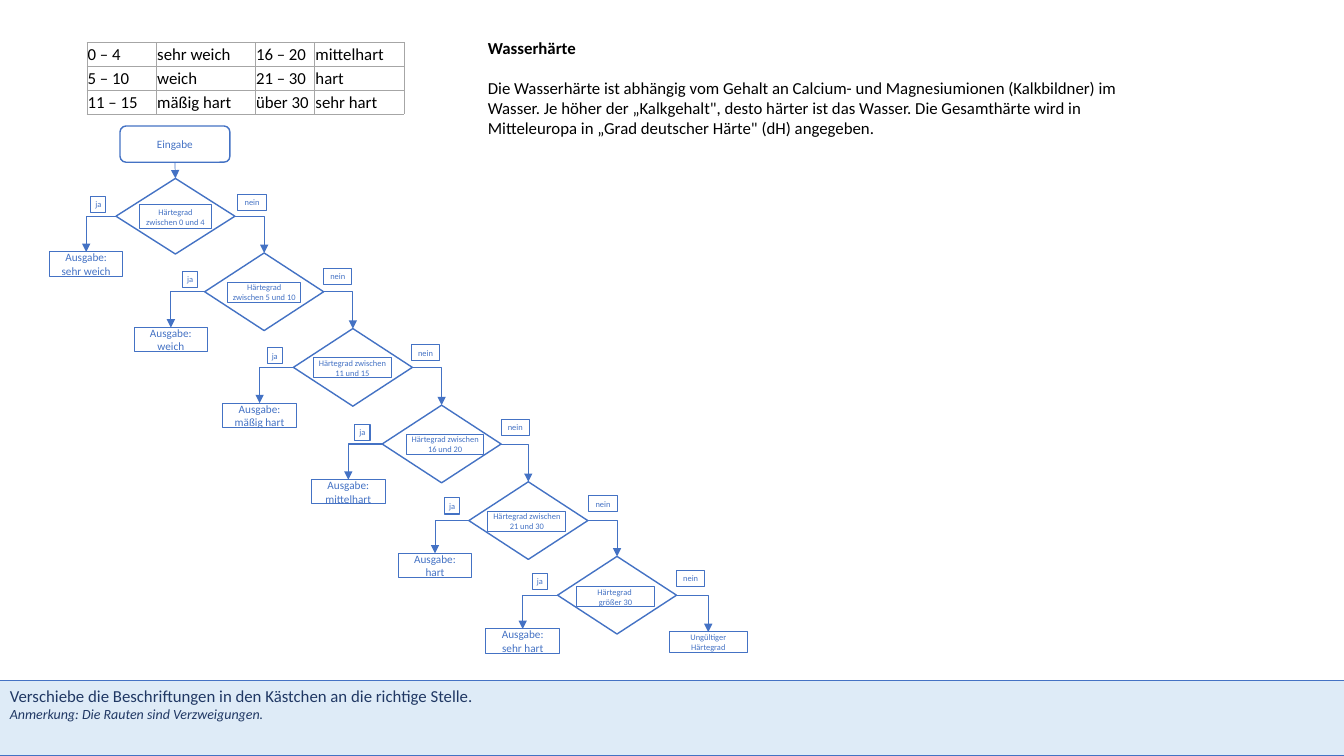
from dataclasses import dataclass

from lxml import etree
from pptx import Presentation
from pptx.dml.color import RGBColor
from pptx.enum.shapes import MSO_CONNECTOR as Link, MSO_SHAPE as Shape
from pptx.enum.text import MSO_ANCHOR as Anchor, PP_ALIGN as Align
from pptx.oxml.ns import qn
from pptx.shapes.autoshape import Shape as AutoShape
from pptx.slide import Slide
from pptx.table import _Cell as Cell
from pptx.text.text import TextFrame
from pptx.util import Inches, Pt

BLUE = RGBColor(0x44, 0x72, 0xC4)
NAVY = RGBColor(0x20, 0x38, 0x64)
PALE_BLUE = RGBColor(0xDE, 0xEB, 0xF7)
BLACK = RGBColor(0, 0, 0)
BORDER_GREY = "A6A6A6"
FONT = "Calibri"

# Connection sites shared by rectangles and diamonds
TOP, LEFT, BOTTOM, RIGHT = range(4)

DIAMOND_WIDTH = 1.18
OUTPUT_SIZE = (0.73, 0.24)
YES_SIZE = (0.15, 0.16)
NO_SIZE = (0.28, 0.16)
CONDITION_HEIGHT = 0.2
SMALL_INSET = 0.04

HARDNESS_ROWS = [
    ("0 – 4", "sehr weich", "16 – 20", "mittelhart"),
    ("5 – 10", "weich", "21 – 30", "hart"),
    ("11 – 15", "mäßig hart", "über 30", "sehr hart"),
]
COLUMN_WIDTHS = (0.69, 0.98, 0.59, 0.89)
ROW_HEIGHT = 0.23

EXPLANATION = (
    "Die Wasserhärte ist abhängig vom Gehalt an Calcium- und Magnesiumionen "
    "(Kalkbildner) im Wasser. Je höher der „Kalkgehalt\", desto härter ist das "
    "Wasser. Die Gesamthärte wird in Mitteleuropa in „Grad deutscher Härte\" "
    "(dH) angegeben."
)

Point = tuple[float, float]


@dataclass(frozen=True)
class Decision:
    diamond: Point
    condition: str
    condition_at: Point
    output: str
    output_at: Point
    yes_at: Point
    no_at: Point
    height: float = 0.77
    condition_width: float = 0.77
    condition_height: float = CONDITION_HEIGHT


DECISIONS = [
    Decision((1.15, 1.77), "Härtegrad zwischen 0 und 4", (1.38, 2.03), "sehr weich",
             (0.49, 2.5), (0.9, 1.95), (2.36, 1.93), 0.75, 0.72, 0.24),
    Decision((2.03, 2.51), "Härtegrad zwischen 5 und 10", (2.26, 2.8), "weich",
             (1.33, 3.25), (1.81, 2.69), (3.21, 2.66), condition_width=0.72),
    Decision((2.91, 3.26), "Härtegrad zwischen 11 und 15", (3.11, 3.55), "mäßig hart",
             (2.21, 4), (2.65, 3.45), (4.08, 3.42)),
    Decision((3.79, 4.02), "Härtegrad zwischen 16 und 20", (4.03, 4.31), "mittelhart",
             (3.09, 4.76), (3.52, 4.21), (4.97, 4.16)),
    Decision((4.65, 4.78), "Härtegrad zwischen 21 und 30", (4.84, 5.07), "hart",
             (3.95, 5.49), (4.41, 4.94), (5.84, 4.92)),
    Decision((5.53, 5.52), "Härtegrad \vgrößer 30", (5.72, 5.82), "sehr hart",
             (4.82, 6.24), (5.28, 5.69), (6.71, 5.66)),
]


def write(frame: TextFrame, text: str, *, size: float, color: RGBColor = BLUE,
          bold: bool = False, italic: bool = False, align: Align = Align.LEFT,
          line_spacing: float | None = None, space_after: float = 0) -> None:
    """Fill the empty first paragraph, or append a paragraph after it."""
    paragraph = frame.paragraphs[0]
    if paragraph.runs:
        paragraph = frame.add_paragraph()
    paragraph.text = text
    paragraph.alignment = align
    paragraph.line_spacing = line_spacing
    paragraph.space_after = Pt(space_after)
    for run in paragraph.runs:
        font = run.font
        font.name, font.size = FONT, Pt(size)
        font.bold, font.italic = bold, italic
        font.color.rgb = color


def add_outlined(slide: Slide, kind: Shape, at: Point, size: Point,
                 line_width: float = 0.75) -> AutoShape:
    shape = slide.shapes.add_shape(kind, *map(Inches, (*at, *size)))
    shape.shadow.inherit = False
    shape.fill.background()
    shape.line.color.rgb = BLUE
    shape.line.width = Pt(line_width)
    shape.text_frame.word_wrap = True
    return shape


def add_label(slide: Slide, text: str, at: Point, size: Point, *,
              text_size: float = 6, kind: Shape = Shape.RECTANGLE,
              line_width: float = 0.75, wrap: bool = True) -> AutoShape:
    label = add_outlined(slide, kind, at, size, line_width)
    frame = label.text_frame
    frame.word_wrap = wrap
    frame.vertical_anchor = Anchor.MIDDLE
    if text_size == 6:
        frame.margin_left = frame.margin_right = Inches(SMALL_INSET)
        frame.margin_top = frame.margin_bottom = Inches(SMALL_INSET)
    write(frame, text, size=text_size, align=Align.CENTER)
    return label


def add_arrow(slide: Slide, start: AutoShape, start_site: int, end: AutoShape,
              kind: Link = Link.ELBOW, width: float = 0.75) -> None:
    """Arrow from a side of one shape to the top of another, with one bend if elbowed."""
    arrow = slide.shapes.add_connector(kind, 0, 0, 0, 0)
    arrow.begin_connect(start, start_site)
    arrow.end_connect(end, TOP)
    arrow.line.color.rgb = BLUE
    arrow.line.width = Pt(width)
    properties = arrow._element.spPr
    if kind == Link.ELBOW:
        properties.find(qn("a:prstGeom")).set("prst", "bentConnector2")
    etree.SubElement(properties.find(qn("a:ln")), qn("a:tailEnd"), type="triangle")
    etree.SubElement(properties, qn("a:effectLst"))


def set_borders(cell: Cell) -> None:
    properties = cell._tc.get_or_add_tcPr()
    for position, side in enumerate(("a:lnL", "a:lnR", "a:lnT", "a:lnB")):
        border = etree.Element(qn(side), w=str(Pt(0.25)))
        fill = etree.SubElement(border, qn("a:solidFill"))
        etree.SubElement(fill, qn("a:srgbClr"), val=BORDER_GREY)
        properties.insert(position, border)


def add_hardness_table(slide: Slide) -> None:
    table = slide.shapes.add_table(
        len(HARDNESS_ROWS), len(COLUMN_WIDTHS), Inches(0.86), Inches(0.42),
        Inches(sum(COLUMN_WIDTHS)), Inches(ROW_HEIGHT * len(HARDNESS_ROWS))).table
    table.first_row = table.horz_banding = False
    for column, width in zip(table.columns, COLUMN_WIDTHS):
        column.width = Inches(width)
    for row, texts in zip(table.rows, HARDNESS_ROWS):
        for cell, text in zip(row.cells, texts):
            cell.fill.background()
            cell.vertical_anchor = Anchor.MIDDLE
            cell.margin_left = cell.margin_right = Inches(0.01)
            cell.margin_top = cell.margin_bottom = Inches(0.01)
            write(cell.text_frame, text, size=12, color=BLACK,
                  line_spacing=1.07, space_after=8)
            set_borders(cell)


def add_explanation(slide: Slide) -> None:
    box = slide.shapes.add_textbox(*map(Inches, (4.74, 0.32, 6.72, 1.11)))
    frame = box.text_frame
    frame.word_wrap = True
    write(frame, "Wasserhärte", size=12, color=BLACK, bold=True, space_after=14.5)
    write(frame, EXPLANATION, size=12, color=BLACK)


def add_task(slide: Slide) -> None:
    bar = add_outlined(slide, Shape.RECTANGLE, (0, 6.75), (13.6, 0.75))
    bar.fill.solid()
    bar.fill.fore_color.rgb = PALE_BLUE
    frame = bar.text_frame
    frame.vertical_anchor = Anchor.TOP
    write(frame, "Verschiebe die Beschriftungen in den Kästchen an die richtige Stelle.",
          size=12, color=NAVY)
    write(frame, "Anmerkung: Die Rauten sind Verzweigungen.",
          size=10, color=NAVY, italic=True)


def add_flowchart(slide: Slide) -> None:
    entry = add_label(slide, "Eingabe", (1.19, 1.25), (1.09, 0.36), text_size=8,
                      kind=Shape.ROUNDED_RECTANGLE, line_width=1)
    previous = None
    for step in DECISIONS:
        diamond = add_outlined(slide, Shape.FLOWCHART_DECISION, step.diamond,
                               (DIAMOND_WIDTH, step.height), line_width=1)
        add_label(slide, step.condition, step.condition_at,
                  (step.condition_width, step.condition_height))
        output = add_label(slide, f"Ausgabe: {step.output}", step.output_at,
                           OUTPUT_SIZE, text_size=8)
        add_label(slide, "ja", step.yes_at, YES_SIZE, wrap=False)
        add_label(slide, "nein", step.no_at, NO_SIZE, wrap=False)
        add_arrow(slide, diamond, LEFT, output)
        if previous is None:
            add_arrow(slide, entry, BOTTOM, diamond, Link.STRAIGHT, 0.5)
        else:
            add_arrow(slide, previous, RIGHT, diamond)
        previous = diamond
    invalid = add_label(slide, "Ungültiger Härtegrad", (6.64, 6.27), (0.77, CONDITION_HEIGHT))
    add_arrow(slide, previous, RIGHT, invalid)


def main() -> None:
    presentation = Presentation()
    presentation.slide_width, presentation.slide_height = Inches(13.33), Inches(7.5)
    slide = presentation.slides.add_slide(presentation.slide_layouts[6])
    add_hardness_table(slide)
    add_explanation(slide)
    add_task(slide)
    add_flowchart(slide)
    presentation.save("out.pptx")


if __name__ == "__main__":
    main()
